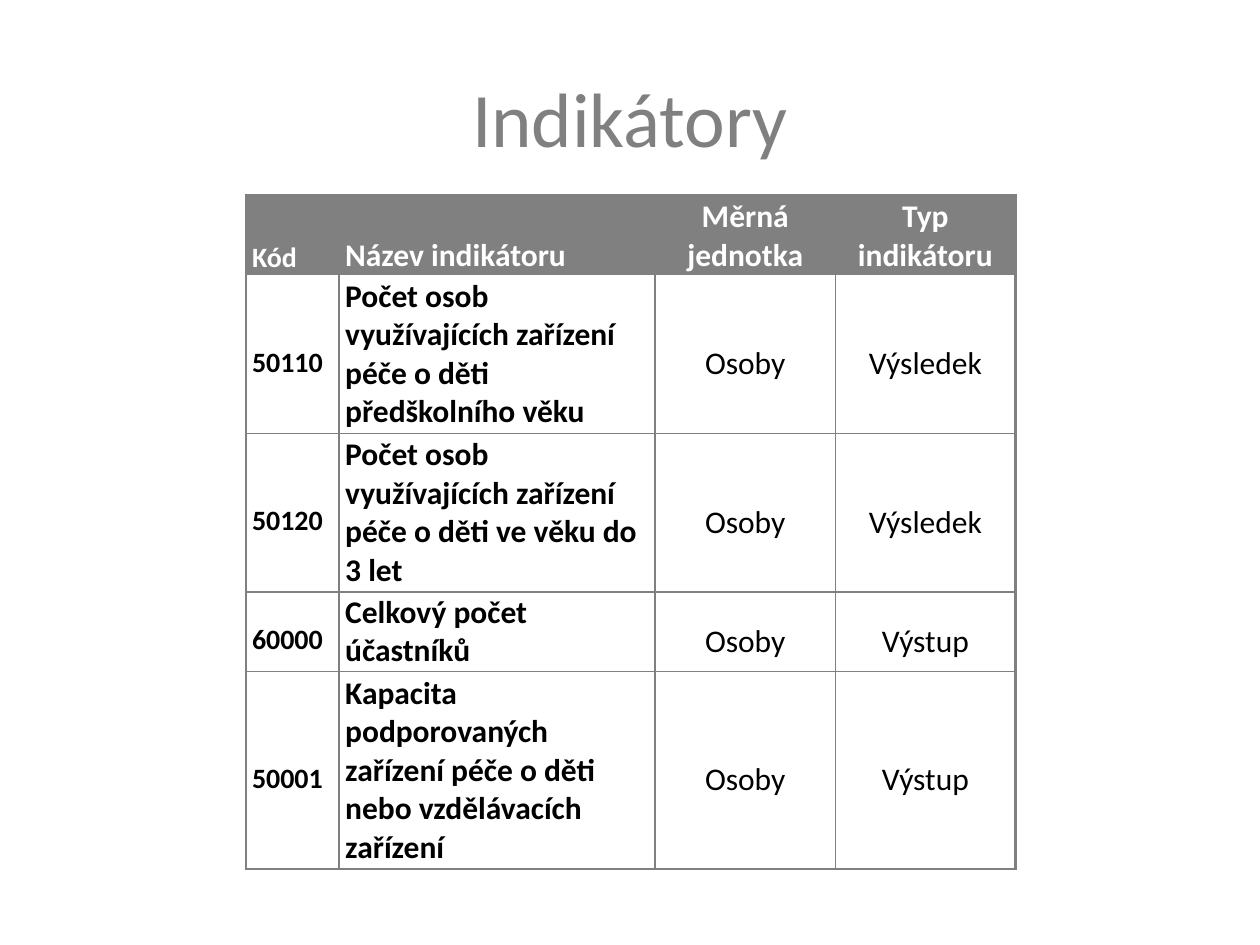
from lxml.etree import SubElement
from pptx import Presentation
from pptx.dml.color import RGBColor
from pptx.enum.text import MSO_ANCHOR, PP_ALIGN
from pptx.oxml.ns import qn
from pptx.util import Emu, Pt

FONT = "Calibri"
GRAY, WHITE, BLACK = "808080", "FFFFFF", "000000"
COLUMN_WIDTHS = [74, 251, 143, 143]
ROW_HEIGHTS = [63, 126, 126, 63, 157]
HEADER = ["Kód", "Název indikátoru", "Měrná jednotka", "Typ indikátoru"]
INDICATORS = [
    ["50110", "Počet osob využívajících zařízení péče o děti předškolního věku", "Osoby", "Výsledek"],
    ["50120", "Počet osob využívajících zařízení péče o děti ve věku do 3 let", "Osoby", "Výsledek"],
    ["60000", "Celkový počet účastníků", "Osoby", "Výstup"],
    ["50001", "Kapacita podporovaných zařízení péče o děti nebo vzdělávacích zařízení", "Osoby", "Výstup"],
]


def px(length):
    """Convert px, at 100 to the inch, to EMU."""
    return Emu(length * 9144)


def rgb(color):
    return RGBColor.from_string(color)


def format_text(paragraph, size, color, alignment, bold=False):
    paragraph.alignment = alignment
    for run in paragraph.runs:
        run.font.name = FONT
        run.font.size = Pt(size)
        run.font.bold = bold
        run.font.color.rgb = rgb(color)


def set_borders(cell, widths):
    """Draw the left, right, top and bottom borders, with widths in points."""
    properties = cell._tc.get_or_add_tcPr()
    for index, (side, width) in enumerate(zip("LRTB", widths)):
        line = SubElement(properties, qn(f"a:ln{side}"), w=str(Pt(width)), cmpd="sng")
        fill = SubElement(line, qn("a:solidFill"))
        SubElement(fill, qn("a:srgbClr"), val=GRAY)
        SubElement(line, qn("a:prstDash"), val="solid")
        properties.insert(index, line)


def add_title(slide, left, top, width, height):
    title = slide.shapes.title
    title.left, title.top, title.width, title.height = map(px, (left, top, width, height))
    title.text_frame.text = "Indikátory"
    title.text_frame.vertical_anchor = MSO_ANCHOR.MIDDLE
    format_text(title.text_frame.paragraphs[0], 44, GRAY, PP_ALIGN.CENTER)


def fill_cell(cell, text, row, column):
    is_header = row == 0
    cell.text_frame.text = text
    cell.margin_left = cell.margin_right = px(5)
    cell.margin_top = cell.margin_bottom = 0
    cell.vertical_anchor = MSO_ANCHOR.BOTTOM if is_header else MSO_ANCHOR.MIDDLE

    if column > 1:
        alignment = PP_ALIGN.CENTER
    elif is_header or column == 0:
        alignment = PP_ALIGN.JUSTIFY
    else:
        alignment = PP_ALIGN.LEFT
    paragraph = cell.text_frame.paragraphs[0]
    paragraph.space_before = Pt(12)
    # Texts that wrap are single-spaced: outer header cells and indicator names
    wraps = column > 1 if is_header else column == 1
    paragraph.line_spacing = 1.0 if wraps else 1.5
    format_text(paragraph, 16 if column == 0 else 18, WHITE if is_header else BLACK,
                alignment, bold=is_header or column < 2)

    if is_header:
        cell.fill.solid()
        cell.fill.fore_color.rgb = rgb(GRAY)
    else:
        cell.fill.background()
    on_edge = (column == 0, column == len(HEADER) - 1, is_header, row == len(INDICATORS))
    set_borders(cell, [1.5 if edge else 1 for edge in on_edge])


def add_indicator_table(slide, left, top):
    rows = [HEADER] + INDICATORS
    frame = slide.shapes.add_table(len(rows), len(HEADER), px(left), px(top),
                                   px(sum(COLUMN_WIDTHS)), px(sum(ROW_HEIGHTS)))
    table = frame.table
    table.horz_banding = False
    for column, width in zip(table.columns, COLUMN_WIDTHS):
        column.width = px(width)
    for row_index, texts in enumerate(rows):
        table.rows[row_index].height = px(ROW_HEIGHTS[row_index])
        for column_index, text in enumerate(texts):
            fill_cell(table.cell(row_index, column_index), text, row_index, column_index)


def main():
    presentation = Presentation()
    presentation.slide_width, presentation.slide_height = px(1000), px(750)
    slide = presentation.slides.add_slide(presentation.slide_layouts[5])
    add_title(slide, 50, 30, 900, 125)
    add_indicator_table(slide, 195, 155)
    presentation.save("out.pptx")


if __name__ == "__main__":
    main()
